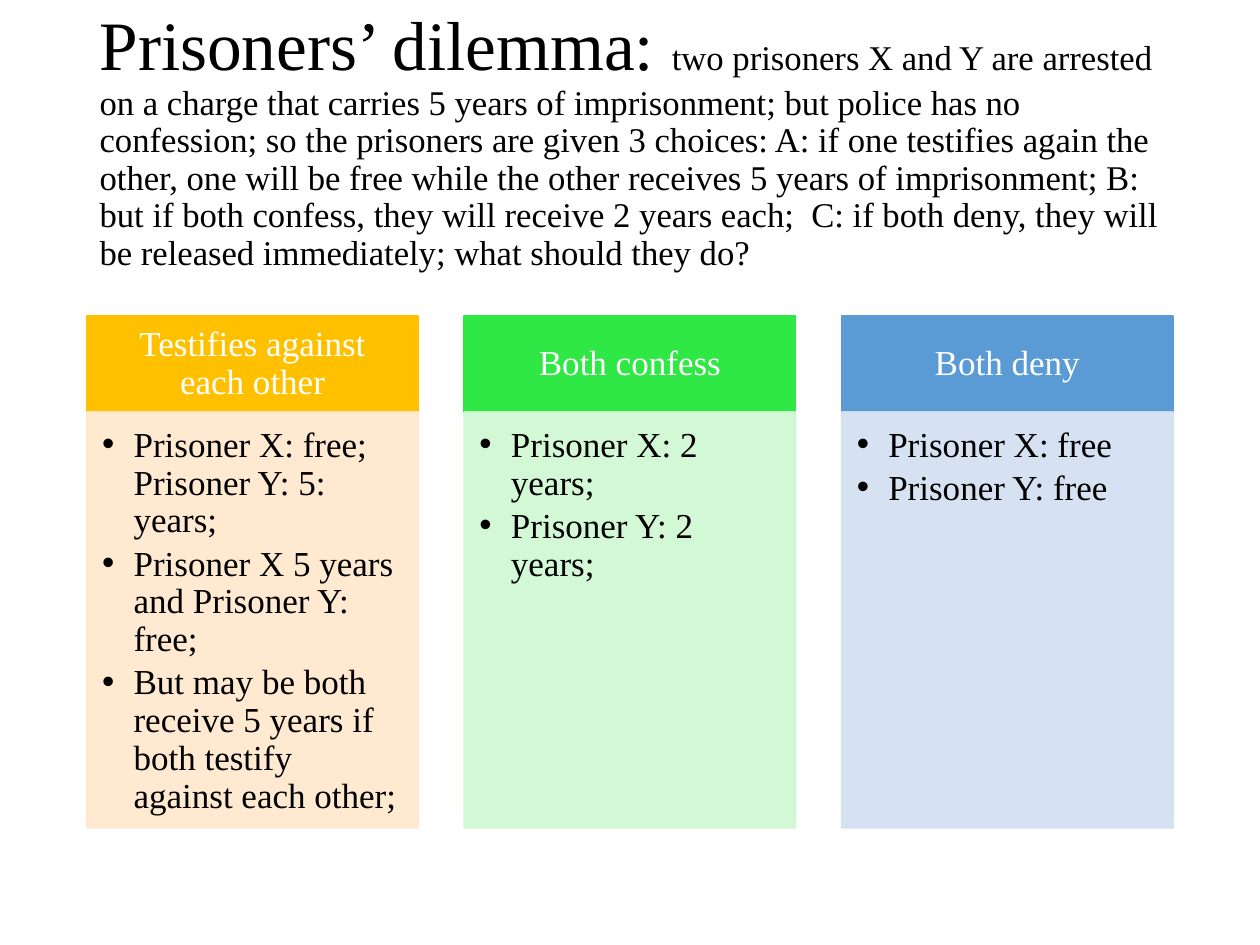
from lxml.etree import SubElement
from pptx import Presentation
from pptx.dml.color import RGBColor
from pptx.enum.shapes import MSO_SHAPE
from pptx.enum.text import MSO_ANCHOR, MSO_AUTO_SIZE, PP_ALIGN
from pptx.oxml.ns import qn
from pptx.util import Inches, Pt

FONT = "Times New Roman"
COLORS = {
    "black": "000000", "white": "FFFFFF",
    "gold": "FFC000", "pale gold": "FFE8CC",
    "green": "30E845", "pale green": "CFF8D1",
    "blue": "5B9BD5", "pale blue": "D2DFF0",
}

TITLE = [
    ("Prisoners’ dilemma: ", 39.6),
    ("two prisoners X and Y are arrested on a charge that carries 5 years of "
     "imprisonment; but police has no confession; so the prisoners are given 3 "
     "choices: A: if one testifies again the other, one will be free while the "
     "other receives 5 years of imprisonment; B: but if both confess, they will "
     "receive 2 years each;  C: if both deny, they will be released immediately; "
     "what should they do?", 19.8),
]
CHOICES = [
    ("Testifies against each other", "gold", [
        "Prisoner X: free; Prisoner Y: 5: years;",
        "Prisoner X 5 years and Prisoner Y: free;",
        "But may be both receive 5 years if both testify against each other;"]),
    ("Both confess", "green", ["Prisoner X: 2 years;", "Prisoner Y: 2 years;"]),
    ("Both deny", "blue", ["Prisoner X: free", "Prisoner Y: free"]),
]

# Grid in inches: three columns span the width between the side margins
WIDTH, HEIGHT, MARGIN = 10, 7.5, 0.69
CONTENT_WIDTH = WIDTH - 2 * MARGIN
COLUMN_WIDTH = 2.63
COLUMN_STEP = (CONTENT_WIDTH - COLUMN_WIDTH) / (len(CHOICES) - 1)
HEADER_TOP, HEADER_HEIGHT, BODY_HEIGHT = 2.51, 0.76, 3.3


def add_run(paragraph, text, size, color):
    run = paragraph.add_run()
    run.text = text
    run.font.name = FONT
    run.font.size = Pt(size)
    run.font.color.rgb = RGBColor.from_string(COLORS[color])


def set_insets(frame, left, top, right, bottom):
    frame.margin_left, frame.margin_top = Inches(left), Inches(top)
    frame.margin_right, frame.margin_bottom = Inches(right), Inches(bottom)


def add_box(slide, left, top, height, color, opacity=100):
    shape = slide.shapes.add_shape(
        MSO_SHAPE.RECTANGLE, Inches(left), Inches(top),
        Inches(COLUMN_WIDTH), Inches(height))
    shape.shadow.inherit = False
    shape.fill.solid()
    shape.line.width = Pt(1)
    for fill in (shape.fill, shape.line.fill):
        fill.solid()
        fill.fore_color.rgb = RGBColor.from_string(COLORS[color])
    if opacity < 100:
        for element in shape.element.spPr.iter(qn("a:srgbClr")):
            SubElement(element, qn("a:alpha"), val=str(opacity * 1000))
    shape.text_frame.word_wrap = True
    return shape.text_frame


def add_bullet(paragraph):
    properties = paragraph._p.get_or_add_pPr()
    properties.set("marL", str(Inches(0.25)))
    properties.set("indent", str(-Inches(0.25)))
    SubElement(properties, qn("a:buFont"), typeface="Arial")
    SubElement(properties, qn("a:buChar"), char="•")


def add_choice(slide, column, heading, color, outcomes):
    left = MARGIN + column * COLUMN_STEP

    # Heading
    frame = add_box(slide, left, HEADER_TOP, HEADER_HEIGHT, color)
    set_insets(frame, 0.16, 0.09, 0.16, 0.09)
    frame.vertical_anchor = MSO_ANCHOR.MIDDLE
    paragraph = frame.paragraphs[0]
    paragraph.alignment = PP_ALIGN.CENTER
    paragraph.line_spacing = 0.9
    add_run(paragraph, heading, 20, "white")

    # Outcomes
    frame = add_box(slide, left, HEADER_TOP + HEADER_HEIGHT, BODY_HEIGHT,
                    "pale " + color, opacity=90)
    set_insets(frame, 0.12, 0.12, 0.16, 0.17)
    frame.vertical_anchor = MSO_ANCHOR.TOP
    for index, outcome in enumerate(outcomes):
        paragraph = frame.add_paragraph() if index else frame.paragraphs[0]
        paragraph.alignment = PP_ALIGN.LEFT
        paragraph.line_spacing = 0.9
        paragraph.space_after = Pt(3)
        add_bullet(paragraph)
        add_run(paragraph, outcome, 20, "black")


def main():
    presentation = Presentation()
    presentation.slide_width, presentation.slide_height = Inches(WIDTH), Inches(HEIGHT)
    slide = presentation.slides.add_slide(presentation.slide_layouts[5])

    # Title with the story
    title = slide.shapes.title
    title.left, title.top = Inches(MARGIN), Inches(0.4)
    title.width, title.height = Inches(CONTENT_WIDTH), Inches(1.45)
    frame = title.text_frame
    frame.auto_size = MSO_AUTO_SIZE.NONE
    frame.word_wrap = True
    frame.vertical_anchor = MSO_ANCHOR.MIDDLE
    paragraph = frame.paragraphs[0]
    paragraph.alignment = PP_ALIGN.LEFT
    paragraph.line_spacing = 0.9
    for text, size in TITLE:
        add_run(paragraph, text, size, "black")

    # One column per choice
    for column, choice in enumerate(CHOICES):
        add_choice(slide, column, *choice)

    presentation.save("out.pptx")


if __name__ == "__main__":
    main()
